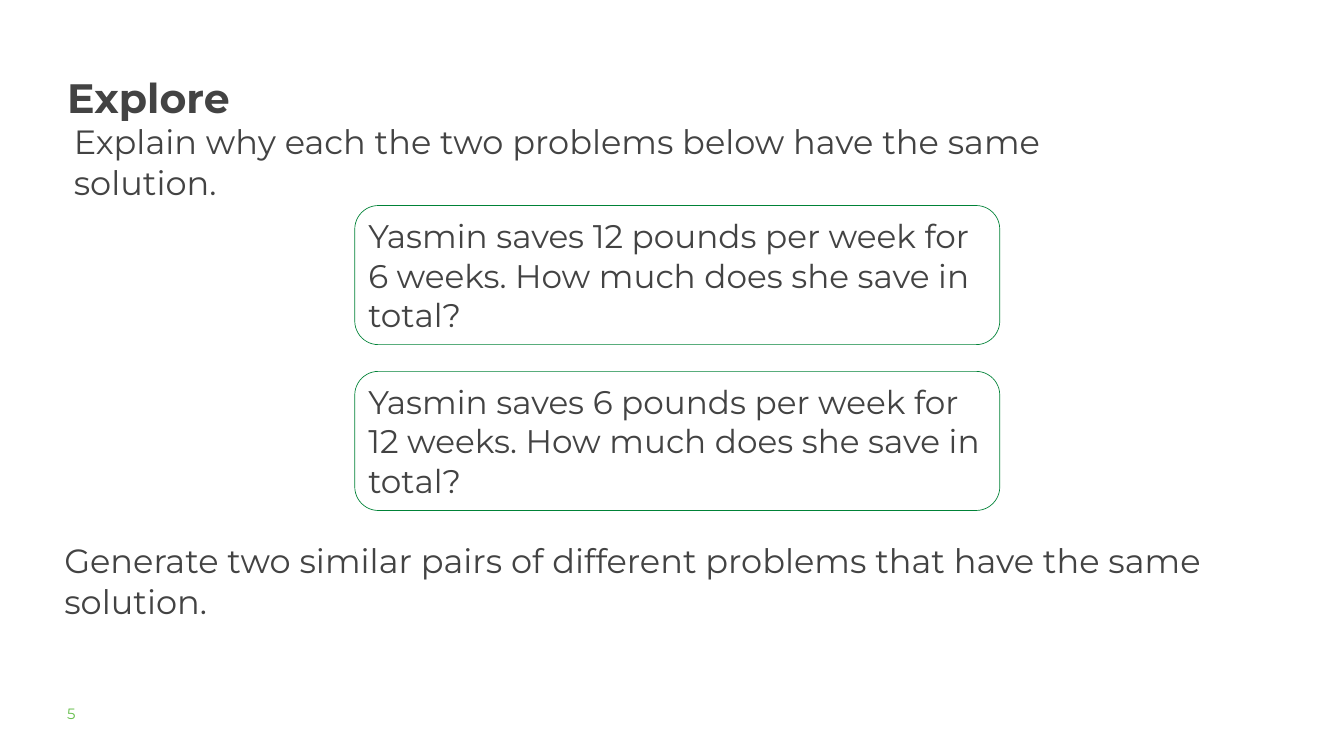
from dataclasses import dataclass

from pptx import Presentation
from pptx.dml.color import RGBColor
from pptx.enum.shapes import MSO_SHAPE
from pptx.enum.text import MSO_ANCHOR, PP_ALIGN
from pptx.util import Cm, Pt

ROUNDED_RECTANGLE = MSO_SHAPE.ROUNDED_RECTANGLE
TOP, MIDDLE = MSO_ANCHOR.TOP, MSO_ANCHOR.MIDDLE
LEFT = PP_ALIGN.LEFT
BLANK_LAYOUT = 6


@dataclass(frozen=True)
class Theme:
    font: str = "Montserrat"
    text: RGBColor = RGBColor(0x43, 0x43, 0x43)
    number: RGBColor = RGBColor(0x65, 0xBE, 0x4B)
    outline: RGBColor = RGBColor(0x00, 0x82, 0x37)
    card_fill: RGBColor = RGBColor(0xFF, 0xFF, 0xFF)
    title_size: int = 44
    body_size: int = 36
    card_size: int = 35
    number_size: int = 16


class SlideBuilder:
    def __init__(self, slide, theme):
        self.slide = slide
        self.theme = theme

    def set_text(self, shape, text, size, color, inset=True, anchor=TOP):
        """Fill a shape with one paragraph and return that paragraph."""
        frame = shape.text_frame
        frame.word_wrap = True
        frame.vertical_anchor = anchor
        frame.margin_left = frame.margin_right = Cm(0.25 if inset else 0)
        frame.margin_top = frame.margin_bottom = Cm(0.13 if inset else 0)
        frame.text = text
        paragraph = frame.paragraphs[0]
        paragraph.alignment = LEFT
        font = paragraph.runs[0].font
        font.name = self.theme.font
        font.size = Pt(size)
        font.color.rgb = color
        return paragraph

    def text_box(self, left, top, width, height):
        return self.slide.shapes.add_textbox(Cm(left), Cm(top), Cm(width), Cm(height))

    def title(self, text, *box):
        paragraph = self.set_text(self.text_box(*box), text, self.theme.title_size,
                                  self.theme.text, inset=False)
        paragraph.line_spacing = 1.15
        paragraph.runs[0].font.bold = True

    def body(self, text, *box):
        self.set_text(self.text_box(*box), text, self.theme.body_size, self.theme.text)

    def page_number(self, text, *box):
        self.set_text(self.text_box(*box), text, self.theme.number_size,
                      self.theme.number, inset=False)

    def card(self, text, left, top, width, height):
        shape = self.slide.shapes.add_shape(
            ROUNDED_RECTANGLE, Cm(left), Cm(top), Cm(width), Cm(height))
        shape.shadow.inherit = False
        shape.adjustments[0] = 0.17
        shape.fill.solid()
        shape.fill.fore_color.rgb = self.theme.card_fill
        shape.line.color.rgb = self.theme.outline
        shape.line.width = Pt(0.75)
        self.set_text(shape, text, self.theme.card_size, self.theme.text, anchor=MIDDLE)


def main():
    presentation = Presentation()
    presentation.slide_width = Cm(50.8)
    presentation.slide_height = Cm(28.58)
    slide = presentation.slides.add_slide(presentation.slide_layouts[BLANK_LAYOUT])
    builder = SlideBuilder(slide, Theme())

    # Heading and page number
    builder.title("Explore", 2.54, 2.46, 36.68, 4.52)
    builder.page_number("5", 2.54, 26.62, 3.99, 0.99)

    # Tasks above and below the cards
    builder.body("Explain why each the two problems below have the same solution.",
                 2.54, 4.45, 42.29, 3.33)
    builder.body("Generate two similar pairs of different problems that have the "
                 "same solution.", 2.18, 20.29, 43.89, 3.33)

    # Problem cards, stacked at an equal step
    card_top, card_step = 7.77, 6.27
    for index, (pounds, weeks) in enumerate([(12, 6), (6, 12)]):
        builder.card(f"Yasmin saves {pounds} pounds per week for {weeks} weeks. "
                     "How much does she save in total?",
                     13.41, card_top + index * card_step, 24.38, 5.26)

    presentation.save("out.pptx")


if __name__ == "__main__":
    main()
